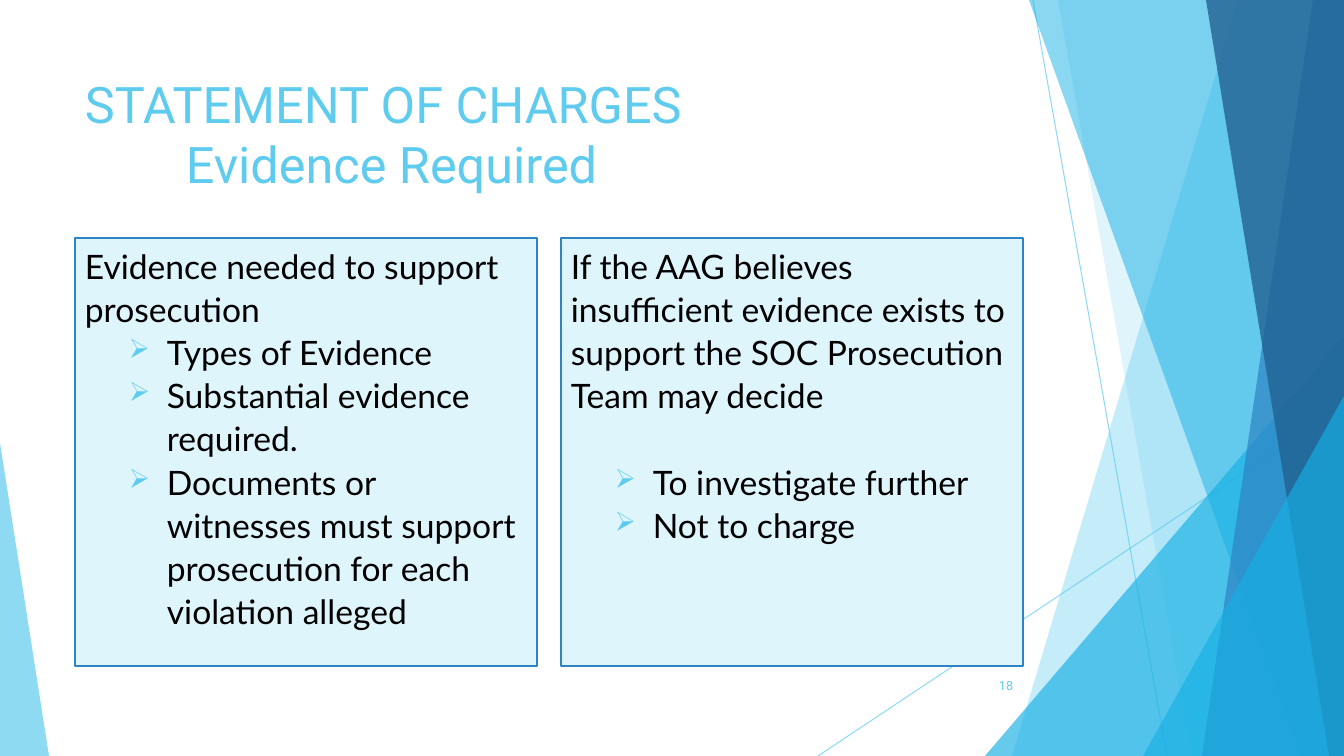
from lxml.etree import SubElement
from pptx import Presentation
from pptx.dml.color import RGBColor
from pptx.enum.shapes import MSO_CONNECTOR, MSO_SHAPE
from pptx.enum.text import MSO_ANCHOR, PP_ALIGN
from pptx.oxml.ns import qn
from pptx.util import Emu, Pt

# Content
TITLE = ["STATEMENT OF CHARGES", "Evidence Required"]
PANELS = [
    {"lead": "Evidence needed to support prosecution", "gap": 0,
     "points": ["Types of Evidence", "Substantial evidence required.",
                "Documents or witnesses must support prosecution for each violation alleged"]},
    {"lead": "If the AAG believes insufficient evidence exists to support the SOC Prosecution "
             "Team may decide", "gap": 31,
     "points": ["To investigate further", "Not to charge"]},
]
PAGE = "18"

COLORS = {"sky": "5FCBEF", "cyan": "17B0E4", "blue": "2E83C3", "navy": "226292",
          "pale": "DFF5FC", "black": "000000"}

# Layout, in px
W, H = 1344, 756
SCALE = 914400 / 100.8
TITLE_BOX = (75, 68, 948, 145)
PAGE_BOX = (947, 666, 76, 40)
PANEL_X, PANEL_Y, PANEL_W, PANEL_H, PANEL_STEP = 75, 238, 462, 428, 486
TITLE_INDENT, POINT_INDENT, POINT_HANG = 101, 82, 38

# Decoration, back to front: a band is (top x, bottom x) and runs to the right edge
RAYS = [(1033, 0, 1167, H), (W, 406, 818, H)]
FACETS = [
    ("band", (1238, 1012), "sky", 36),
    ("band", (1058, 1192), "sky", 20),
    ("right", (985, 336, 359, 420), "cyan", 66),
    ("band", (1029, 1301), "cyan", 50),
    ("band", (1313, 1202), "blue", 70),
    ("band", (1206, 1329), "navy", 80),
    ("right", (1143, 396, 201, 360), "cyan", 66),
    ("left", (0, 443, 49, 313), "sky", 70),
]


def px(*values):
    return [Emu(round(v * SCALE)) for v in values]


def rgb(name):
    return RGBColor.from_string(COLORS[name])


def set_alpha(parent, percent):
    color = next(parent.iter(qn("a:srgbClr")))
    SubElement(color, qn("a:alpha"), val=str(percent * 1000))


def add_text(tf, text, size=24, font="Lato", color="black", align=PP_ALIGN.LEFT,
             line=1.0, before=0, indent=0, hang=0, bullet=None):
    p = tf.paragraphs[0]
    if p.runs:
        p = tf.add_paragraph()
    p.alignment, p.line_spacing, p.space_before = align, line, Pt(before)
    pPr = p._p.get_or_add_pPr()
    left, first = px(indent, -hang)
    pPr.set("marL", str(left))
    pPr.set("indent", str(first))
    if bullet:
        p.level = 1
        SubElement(SubElement(pPr, qn("a:buClr")), qn("a:srgbClr"), val=COLORS["sky"])
        SubElement(pPr, qn("a:buSzPct"), val="80000")
        SubElement(pPr, qn("a:buChar"), char=bullet)
    r = p.add_run()
    r.text = text
    r.font.size, r.font.name = Pt(size), font
    r.font.color.rgb = rgb(color)


def add_box(s, box, anchor=MSO_ANCHOR.TOP):
    tf = s.shapes.add_textbox(*px(*box)).text_frame
    tf.word_wrap, tf.vertical_anchor = True, anchor
    return tf


def add_ray(s, ends):
    ray = s.shapes.add_connector(MSO_CONNECTOR.STRAIGHT, *px(*ends))
    ray.line.width = Pt(0.75)
    ray.line.color.rgb = rgb("sky")
    spPr = ray._element.spPr
    set_alpha(spPr, 70)
    SubElement(spPr, qn("a:effectLst"))


def add_facet(s, kind, place, color, opacity):
    if kind == "band":
        top, bottom = place
        outline = s.shapes.build_freeform(top, 0, scale=SCALE)
        outline.add_line_segments([(W, 0), (W, H), (bottom, H)], close=True)
        sp = outline.convert_to_shape()
    else:
        sp = s.shapes.add_shape(MSO_SHAPE.ISOSCELES_TRIANGLE, *px(*place))
        sp.adjustments[0] = 1 if kind == "right" else 0
    sp.shadow.inherit = False
    sp.fill.solid()
    sp.fill.fore_color.rgb = rgb(color)
    set_alpha(sp._element.spPr, opacity)
    sp.line.fill.background()


def add_panel(s, x, panel):
    sp = s.shapes.add_shape(MSO_SHAPE.RECTANGLE, *px(x, PANEL_Y, PANEL_W, PANEL_H))
    sp.shadow.inherit = False
    sp.fill.solid()
    sp.fill.fore_color.rgb = rgb("pale")
    sp.line.color.rgb = rgb("blue")
    sp.line.width = Pt(1.5)
    tf = sp.text_frame
    tf.word_wrap, tf.vertical_anchor = True, MSO_ANCHOR.TOP
    add_text(tf, panel["lead"], line=1.07)
    for i, point in enumerate(panel["points"]):
        add_text(tf, point, line=1.07, before=0 if i else panel["gap"],
                 indent=POINT_INDENT, hang=POINT_HANG, bullet="➢")


def main():
    prs = Presentation()
    prs.slide_width, prs.slide_height = px(W, H)
    s = prs.slides.add_slide(prs.slide_layouts[6])

    # Background facets
    for ends in RAYS:
        add_ray(s, ends)
    for facet in FACETS:
        add_facet(s, *facet)

    # Title
    tf = add_box(s, TITLE_BOX)
    for i, text in enumerate(TITLE):
        add_text(tf, text, size=36, font="Roboto", color="sky", indent=i * TITLE_INDENT)

    # Panels
    for i, panel in enumerate(PANELS):
        add_panel(s, PANEL_X + i * PANEL_STEP, panel)

    # Page number
    add_text(add_box(s, PAGE_BOX, MSO_ANCHOR.MIDDLE), PAGE, size=9, font="Roboto",
             color="sky", align=PP_ALIGN.RIGHT)
    prs.save("out.pptx")


if __name__ == "__main__":
    main()
